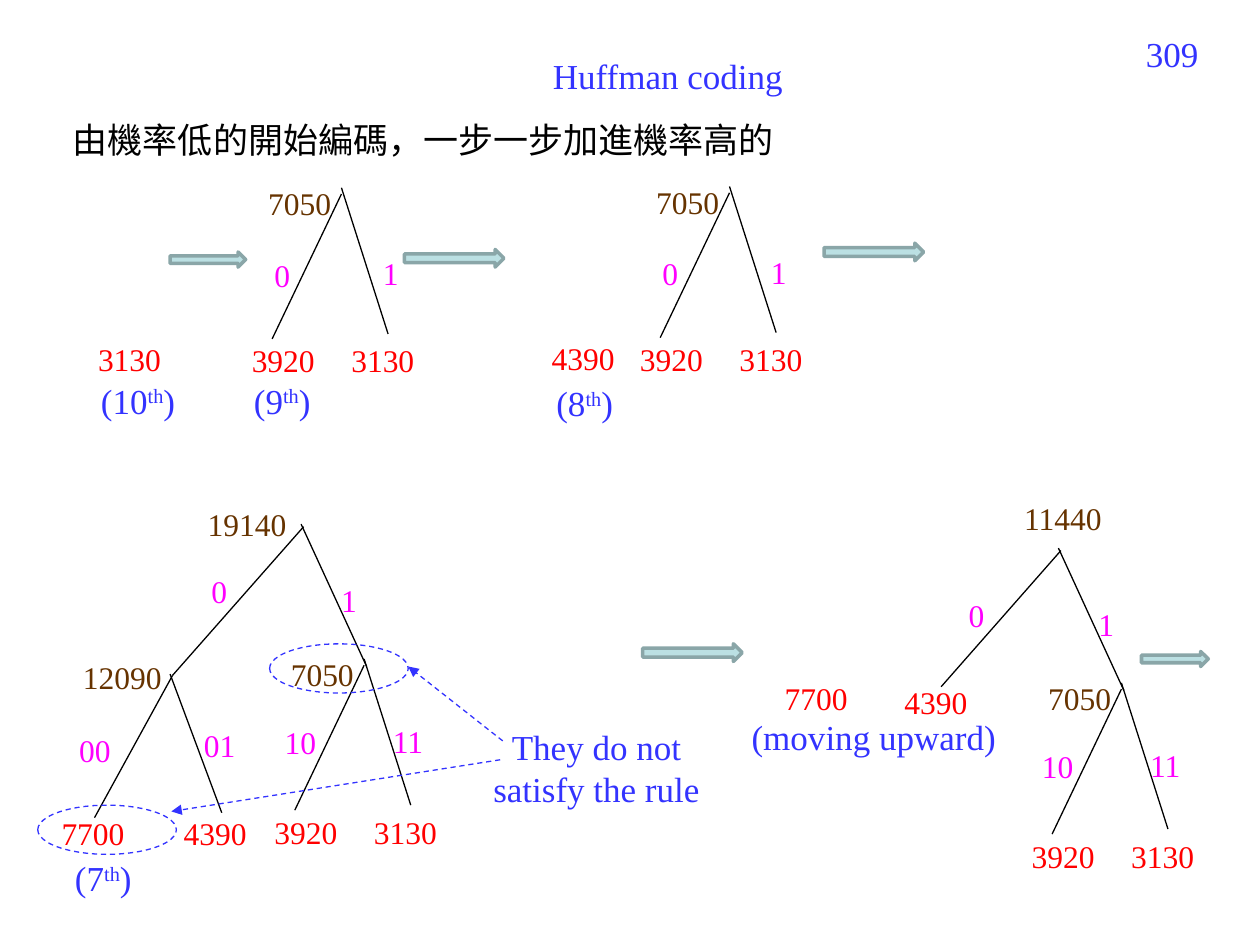
from dataclasses import dataclass

import lxml.etree
import pptx
import pptx.dml.color
import pptx.enum.dml
import pptx.enum.shapes
import pptx.enum.text
import pptx.oxml.ns
import pptx.util
from pptx.util import Inches

FONT = "Times New Roman"
COLORS = {
    "black": "000000",
    "note": "3333FF",
    "leaf": "FF0000",
    "node": "663300",
    "bit": "FF00FF",
    "arrow": "BBE0E3",
    "arrow_edge": "8AA6A8",
}
LABEL_WIDTHS = {1: 0.33, 2: 0.45, 4: 0.7, 5: 0.83}
DASH = pptx.enum.dml.MSO_LINE_DASH_STYLE.DASH
SHAPES = pptx.enum.shapes.MSO_SHAPE
ALIGN = pptx.enum.text.PP_ALIGN


@dataclass
class Label:
    text: str
    x: float
    y: float
    color: str


@dataclass
class Note:
    runs: list[str]
    x: float
    y: float
    w: float
    h: float = 0.44
    align: int = ALIGN.CENTER
    color: str = "note"


@dataclass
class Pair:
    x: float
    y: float
    prefix: str = ""


@dataclass
class Branch:
    x: float
    y: float
    left_end: tuple[float, float]


@dataclass
class Box:
    x: float
    y: float
    w: float
    h: float


def rgb(name: str) -> pptx.dml.color.RGBColor:
    return pptx.dml.color.RGBColor.from_string(COLORS[name])


def add_run(p, text: str, size: int, color: str):
    r = p.add_run()
    r.text = text
    r.font.size = pptx.util.Pt(size)
    r.font.name = FONT
    r.font.color.rgb = rgb(color)
    return r


def draw_label(s, label: Label) -> None:
    width = LABEL_WIDTHS[len(label.text)]
    tb = s.shapes.add_textbox(Inches(label.x), Inches(label.y), Inches(width), Inches(0.4))
    tb.text_frame.word_wrap = False
    add_run(tb.text_frame.paragraphs[0], label.text, 18, label.color)


def draw_note(s, note: Note) -> None:
    tb = s.shapes.add_textbox(Inches(note.x), Inches(note.y), Inches(note.w), Inches(note.h))
    tf = tb.text_frame
    tf.word_wrap = True
    p = tf.paragraphs[0]
    p.alignment = note.align
    for text in note.runs:
        r = add_run(p, text, 20, note.color)
        if text == "th":
            r.font._element.set("baseline", "30000")


def draw_line(s, x1: float, y1: float, x2: float, y2: float, color: str = "black"):
    line = s.shapes.add_connector(
        pptx.enum.shapes.MSO_CONNECTOR.STRAIGHT, Inches(x1), Inches(y1), Inches(x2), Inches(y2)
    )
    line.line.width = pptx.util.Pt(0.75)
    line.line.color.rgb = rgb(color)
    lxml.etree.SubElement(line._element.spPr, pptx.oxml.ns.qn("a:effectLst"))
    return line


def draw_pointer(s, x1: float, y1: float, x2: float, y2: float) -> None:
    line = draw_line(s, x1, y1, x2, y2, "note")
    line.line.dash_style = DASH
    ln = line.line._get_or_add_ln()
    lxml.etree.SubElement(ln, pptx.oxml.ns.qn("a:tailEnd"), type="triangle")


def draw_box(s, kind: int, box: Box, edge: str, width: float):
    sp = s.shapes.add_shape(kind, Inches(box.x), Inches(box.y), Inches(box.w), Inches(box.h))
    sp.shadow.inherit = False
    sp.fill.background()
    sp.line.color.rgb = rgb(edge)
    sp.line.width = pptx.util.Pt(width)
    return sp


def draw_step(s, box: Box) -> None:
    sp = draw_box(s, SHAPES.RIGHT_ARROW, box, "arrow_edge", 2)
    sp.fill.solid()
    sp.fill.fore_color.rgb = rgb("arrow")


def draw_pair(s, pair: Pair) -> None:
    x, y = pair.x, pair.y
    draw_line(s, x, y + 0.05, x - 0.55, y + 1.2)
    draw_line(s, x, y, x + 0.37, y + 1.16)
    shift = 0.1 * len(pair.prefix)
    lift = 0.03 * len(pair.prefix)
    for label in (
        Label("3130", x - 0.02, y + 1.17, "leaf"),
        Label("3920", x - 0.81, y + 1.17, "leaf"),
        Label("7050", x - 0.68, y - 0.08, "node"),
        Label(pair.prefix + "0", x - 0.63 - shift, y + 0.49 - lift, "bit"),
        Label(pair.prefix + "1", x + 0.23 - shift, y + 0.48 - lift, "bit"),
    ):
        draw_label(s, label)


def draw_branch(s, branch: Branch) -> None:
    x, y = branch.x, branch.y
    draw_line(s, x + 0.02, y + 0.02, *branch.left_end)
    draw_line(s, x, y, x + 0.52, y + 1.13)
    draw_label(s, Label("0", x - 0.81, y + 0.33, "bit"))
    draw_label(s, Label("1", x + 0.22, y + 0.4, "bit"))


PAIRS = [Pair(2.71, 1.49), Pair(5.79, 1.48), Pair(2.89, 5.23, "1"), Pair(8.9, 5.42, "1")]
BRANCHES = [Branch(2.39, 4.16, (1.37, 5.36)), Branch(8.4, 4.35, (7.47, 5.45))]
STEPS = [
    Box(1.35, 2, 0.6, 0.12),
    Box(3.21, 1.98, 0.79, 0.14),
    Box(6.54, 1.93, 0.79, 0.14),
    Box(5.1, 5.11, 0.79, 0.14),
    Box(9.06, 5.17, 0.53, 0.12),
]
VIOLATIONS = [Box(0.3, 6.39, 1.1, 0.39), Box(2.14, 5.11, 1.1, 0.39)]
LABELS = [
    Label("3130", 0.68, 2.65, "leaf"),
    Label("4390", 4.28, 2.64, "leaf"),
    Label("7700", 0.39, 6.41, "leaf"),
    Label("4390", 1.36, 6.41, "leaf"),
    Label("7700", 6.13, 5.34, "leaf"),
    Label("4390", 7.08, 5.37, "leaf"),
    Label("19140", 1.55, 3.96, "node"),
    Label("12090", 0.56, 5.17, "node"),
    Label("11440", 8.03, 3.91, "node"),
    Label("00", 0.53, 5.75, "bit"),
    Label("01", 1.52, 5.71, "bit"),
]
NOTES = [
    Note(["309"], 7.28, 0.21, 2.33, 0.52, ALIGN.RIGHT),
    Note(["Huffman coding"], 2.79, 0.38, 5.02),
    Note(["由機率低的開始編碼，一步一步加進機率高的"], 0.48, 0.89, 6.8, 0.44, ALIGN.LEFT, "black"),
    Note(["They do not satisfy the rule"], 3.75, 5.71, 1.97, 0.77),
    Note(["(moving upward)"], 5.8, 5.63, 2.27),
    Note(["(10", "th", ")"], 0.55, 2.96, 1.09),
    Note(["(9", "th", ")"], 1.74, 2.96, 1),
    Note(["(8", "th", ")"], 4.14, 2.98, 1),
    Note(["(7", "th", ")"], 0.32, 6.75, 1),
]


def main() -> None:
    prs = pptx.Presentation()
    prs.slide_width, prs.slide_height = Inches(10), Inches(7.5)
    s = prs.slides.add_slide(prs.slide_layouts[6])
    for branch in BRANCHES:
        draw_branch(s, branch)
    for pair in PAIRS:
        draw_pair(s, pair)
    draw_line(s, 1.37, 5.36, 0.75, 6.49)
    draw_line(s, 1.35, 5.35, 1.76, 6.45)
    for label in LABELS:
        draw_label(s, label)
    for box in VIOLATIONS:
        draw_box(s, SHAPES.OVAL, box, "note", 0.75).line.dash_style = DASH
    draw_pointer(s, 3.97, 6.03, 1.36, 6.44)
    draw_pointer(s, 3.99, 5.88, 3.24, 5.29)
    for step in STEPS:
        draw_step(s, step)
    for note in NOTES:
        draw_note(s, note)
    prs.save("out.pptx")


if __name__ == "__main__":
    main()
